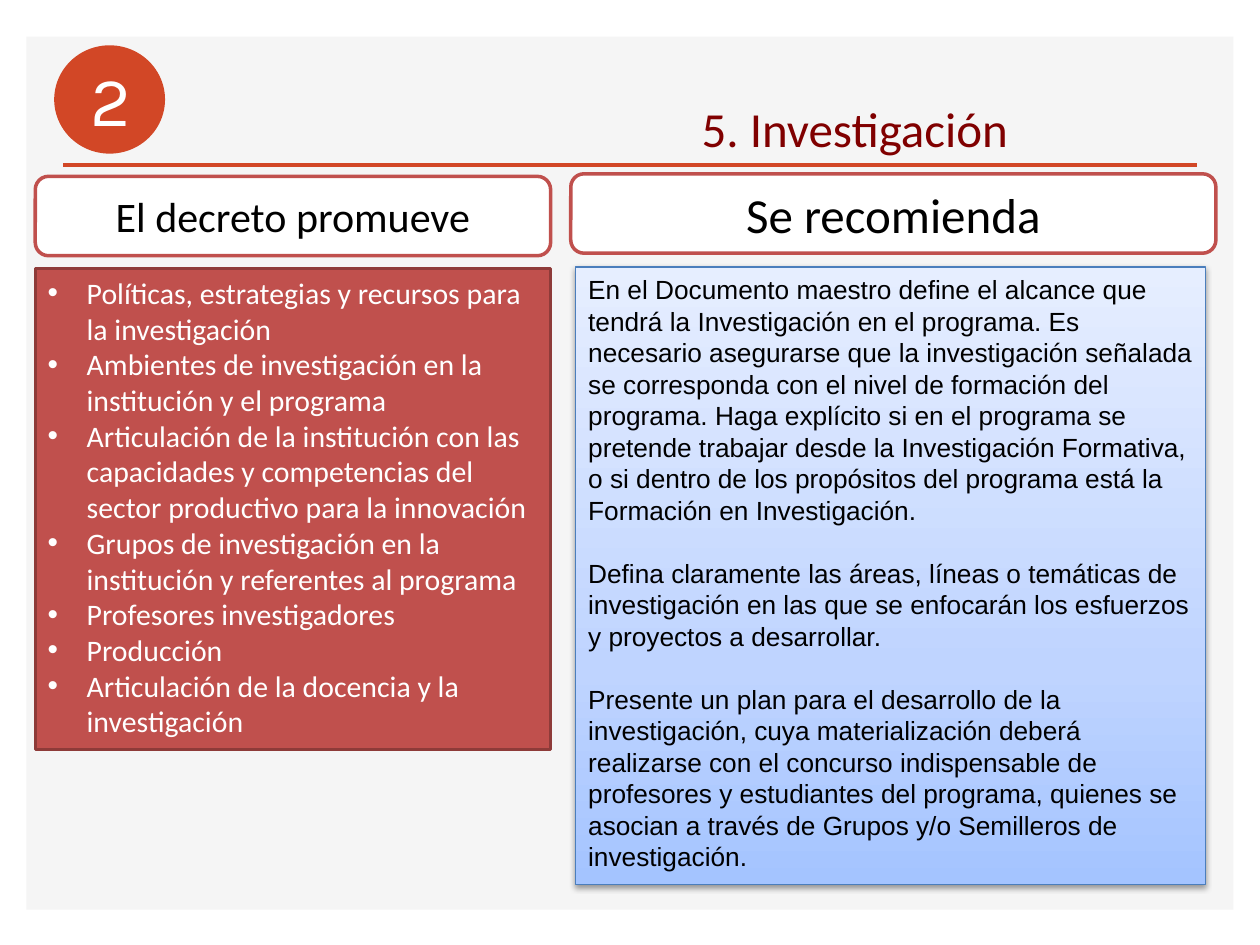
from lxml import etree
from pptx import Presentation
from pptx.dml.color import RGBColor as RGB
from pptx.enum.shapes import MSO_CONNECTOR as CONN, MSO_SHAPE as SHAPE
from pptx.enum.text import MSO_ANCHOR as ANCHOR, PP_ALIGN as ALIGN
from pptx.oxml import parse_xml
from pptx.oxml.ns import qn
from pptx.util import Inches, Pt

NS = 'xmlns:a="http://schemas.openxmlformats.org/drawingml/2006/main"'
RED, ORANGE, WHITE, BLACK = "C0504D", "D24726", "FFFFFF", "000000"
STOPS = [(0, "A4C4FF"), (35, "BFD4FF"), (100, "E6EEFF")]

TOPICS = [
    "Políticas, estrategias y recursos para la investigación",
    "Ambientes de investigación en la institución y el programa",
    "Articulación de la institución con las capacidades y competencias "
    "del sector productivo para la innovación",
    "Grupos de investigación en la institución y referentes al programa",
    "Profesores investigadores",
    "Producción",
    "Articulación de la docencia y la investigación",
]
ADVICE = [
    "En el Documento maestro define el alcance que tendrá la Investigación "
    "en el programa. Es necesario asegurarse que la investigación señalada "
    "se corresponda con el nivel de formación del programa. Haga explícito "
    "si en el programa se pretende trabajar desde la Investigación "
    "Formativa, o si dentro de los propósitos del programa está la "
    "Formación en Investigación.",
    "Defina claramente las áreas, líneas o temáticas de investigación en "
    "las que se enfocarán los esfuerzos y proyectos a desarrollar.",
    "Presente un plan para el desarrollo de la investigación, cuya "
    "materialización deberá realizarse con el concurso indispensable de "
    "profesores y estudiantes del programa, quienes se asocian a través de "
    "Grupos y/o Semilleros de investigación.",
]


def color(code):
    return RGB.from_string(code)


def add_box(slide, kind, at, fill, line=None, width=2):
    box = slide.shapes.add_shape(kind, *map(Inches, at))
    box.shadow.inherit = False
    box.fill.solid()
    box.fill.fore_color.rgb = color(fill)
    if line:
        box.line.color.rgb = color(line)
        box.line.width = Pt(width)
    else:
        box.line.fill.background()
    return box


def add_rule(slide, start, end, code, width):
    rule = slide.shapes.add_connector(CONN.STRAIGHT, *map(Inches, start + end))
    rule.line.color.rgb = color(code)
    rule.line.width = Pt(width)
    etree.SubElement(rule._element.spPr, qn("a:effectLst"))


def add_label(slide, at, text, size, font, code, align=ALIGN.LEFT, wrap=True):
    label = slide.shapes.add_textbox(*map(Inches, at))
    write(label, [text], size, font, code, align=align, wrap=wrap)


def write(shape, lines, size, font, code, align=ALIGN.LEFT,
          anchor=ANCHOR.TOP, gap=0, wrap=True):
    frame = shape.text_frame
    frame.word_wrap = wrap
    frame.vertical_anchor = anchor
    for i, line in enumerate(lines):
        para = frame.add_paragraph() if i else frame.paragraphs[0]
        para.alignment = align
        para.space_before = Pt(gap if i else 0)
        run = para.add_run()
        run.text = line
        run.font.size = Pt(size)
        run.font.name = font
        run.font.color.rgb = color(code)


def add_bullets(shape, indent):
    for para in shape.text_frame.paragraphs:
        props = para._p.get_or_add_pPr()
        props.set("marL", str(Inches(indent)))
        props.set("indent", str(-Inches(indent)))
        props.append(parse_xml(f'<a:buFont {NS} typeface="Arial"/>'))
        props.append(parse_xml(f'<a:buChar {NS} char="•"/>'))


def shade(shape, stops, angle):
    """Give the shape a linear gradient, with the angle clockwise."""
    marks = "".join(f'<a:gs pos="{pos * 1000}"><a:srgbClr val="{code}"/></a:gs>'
                    for pos, code in stops)
    props = shape._element.spPr
    props.replace(props.find(qn("a:solidFill")), parse_xml(
        f'<a:gradFill {NS} rotWithShape="1"><a:gsLst>{marks}</a:gsLst>'
        f'<a:lin ang="{angle * 60000}" scaled="0"/></a:gradFill>'))


def add_shadow(shape, code, alpha, blur, dist, angle):
    effects = shape._element.spPr.find(qn("a:effectLst"))
    effects.append(parse_xml(
        f'<a:outerShdw {NS} blurRad="{Pt(blur)}" dist="{Pt(dist)}" '
        f'dir="{angle * 60000}" rotWithShape="0"><a:srgbClr val="{code}">'
        f'<a:alpha val="{alpha * 1000}"/></a:srgbClr></a:outerShdw>'))


def add_head(slide, at, text, size):
    head = add_box(slide, SHAPE.ROUNDED_RECTANGLE, at, WHITE, RED)
    write(head, [text], size, "Calibri", BLACK, ALIGN.CENTER, ANCHOR.MIDDLE)


def main():
    deck = Presentation()
    deck.slide_width, deck.slide_height = Inches(10), Inches(7.5)
    slide = deck.slides.add_slide(deck.slide_layouts[6])

    add_box(slide, SHAPE.RECTANGLE, (0.21, 0.29, 9.58, 6.93), "F5F5F5")
    add_rule(slide, (0.5, 1.31), (9.5, 1.31), ORANGE, 2)
    add_box(slide, SHAPE.OVAL, (0.43, 0.36, 0.88, 0.86), ORANGE)
    add_label(slide, (0.28, 0.4, 1.2, 0.77), "2", 40, "Karla", WHITE,
              ALIGN.CENTER)
    add_label(slide, (5.47, 0.73, 2.66, 0.57), "5. Investigación", 28,
              "Calibri", "800000", wrap=False)

    topics = add_box(slide, SHAPE.RECTANGLE, (0.28, 2.13, 4.09, 3.82),
                     RED, "8E3B39")
    write(topics, TOPICS, 17, "Calibri", WHITE)
    add_bullets(topics, 0.31)

    advice = add_box(slide, SHAPE.RECTANGLE, (4.57, 2.12, 5, 4.9),
                     STOPS[0][1], "4B7EBC", 0.75)
    shade(advice, STOPS, 270)
    add_shadow(advice, BLACK, 38, 3.1, 1.6, 90)
    write(advice, ADVICE, 15, "Arial", BLACK, gap=18)

    add_head(slide, (0.28, 1.4, 4.09, 0.63), "El decreto promueve", 24)
    add_head(slide, (4.53, 1.38, 5.12, 0.63), "Se recomienda", 28)
    deck.save("out.pptx")


if __name__ == "__main__":
    main()
